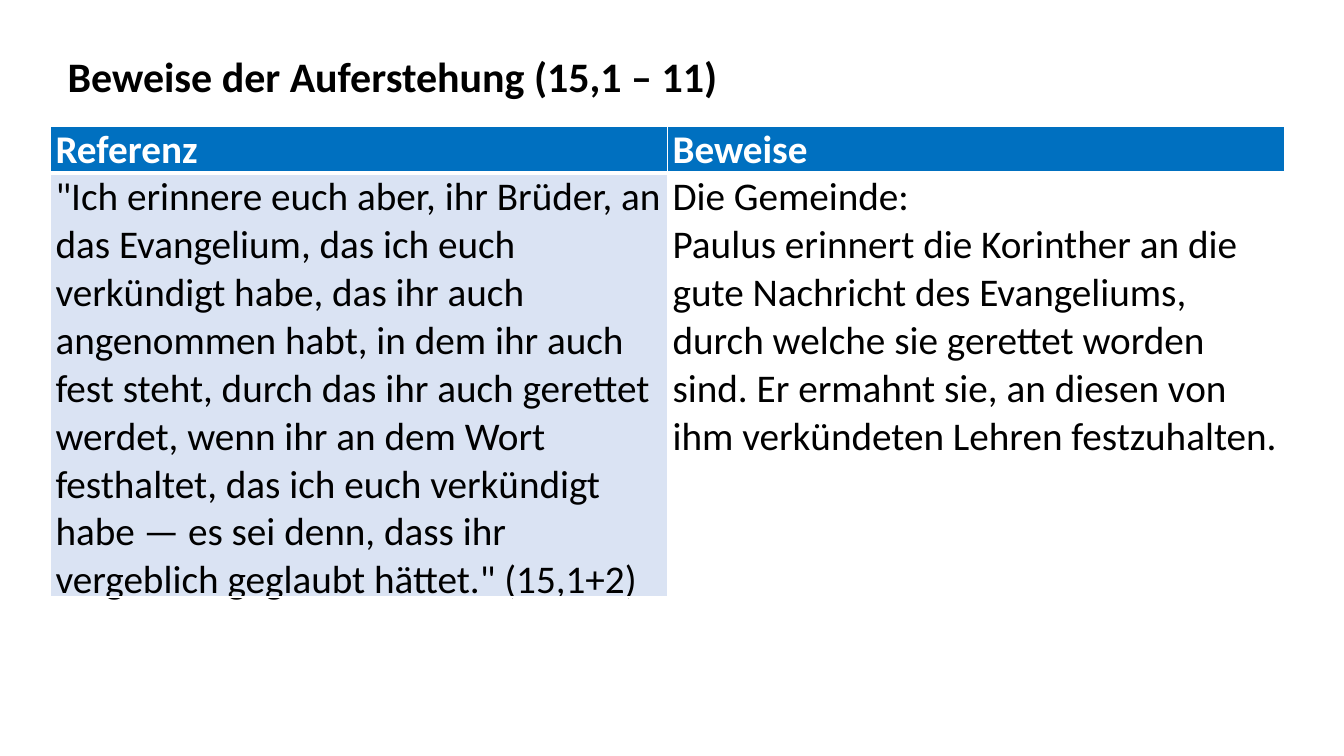
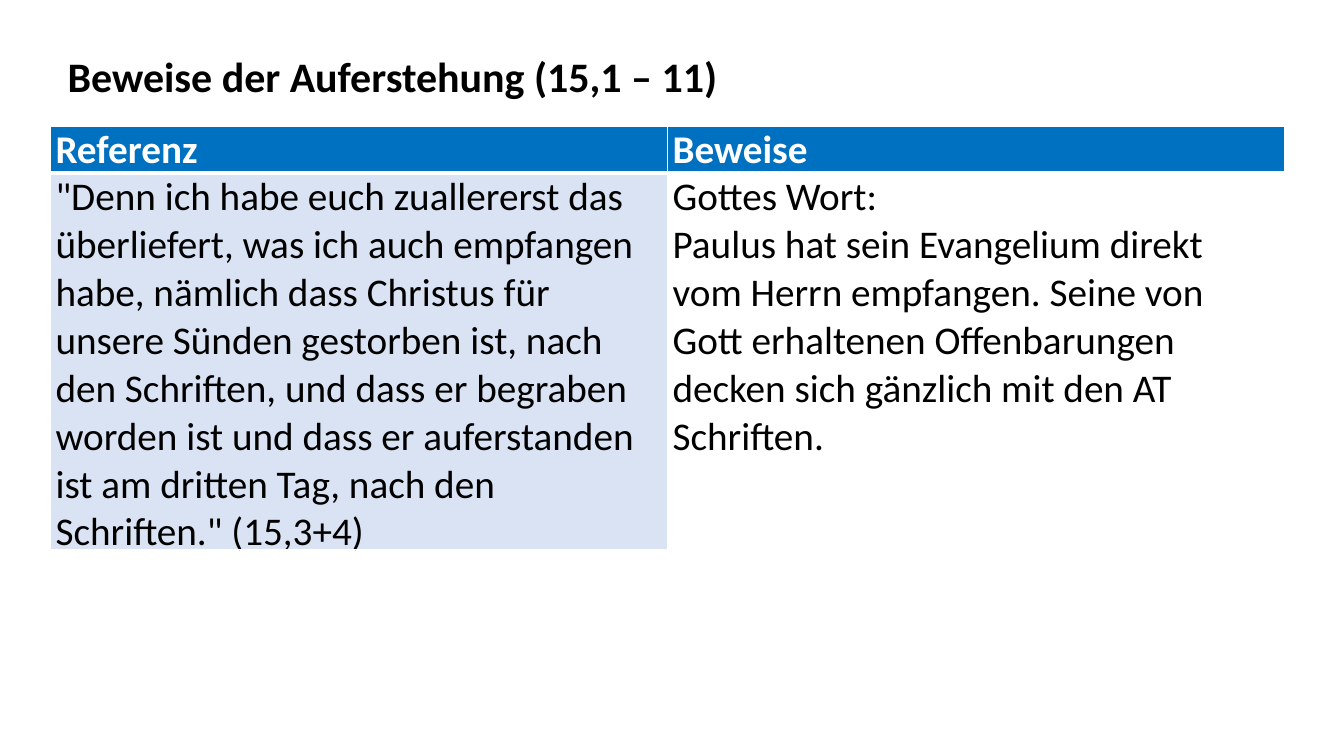
from lxml import etree
from pptx import Presentation
from pptx.dml.color import RGBColor
from pptx.enum import text
from pptx.oxml import ns
from pptx.util import Cm, Pt

BLACK = RGBColor(0, 0, 0)
WHITE = RGBColor(0xFF, 0xFF, 0xFF)
BLUE = RGBColor(0x00, 0x70, 0xC0)
PALE = RGBColor(0xDA, 0xE3, 0xF3)
FONT = "Calibri"
TITLE = "Beweise der Auferstehung (15,1 – 11)"
HEADS = ["Referenz", "Beweise"]

pages = [
    (
        3.1,
        11.86,
        '"Ich erinnere euch aber, ihr Brüder, an das Evangelium, das ich euch '
        "verkündigt habe, das ihr auch angenommen habt, in dem ihr auch fest steht, "
        "durch das ihr auch gerettet werdet, wenn ihr an dem Wort festhaltet, das ich "
        "euch verkündigt habe — es sei denn, dass ihr vergeblich geglaubt "
        'hättet." (15,1+2)',
        "Die Gemeinde:\n"
        "Paulus erinnert die Korinther an die gute Nachricht des Evangeliums, durch "
        "welche sie gerettet worden sind. Er ermahnt sie, an diesen von ihm "
        "verkündeten Lehren festzuhalten.",
    ),
    (
        2.54,
        10.67,
        '"Denn ich habe euch zuallererst das überliefert, was ich auch empfangen '
        "habe, nämlich dass Christus für unsere Sünden gestorben ist, nach den "
        "Schriften, und dass er begraben worden ist und dass er auferstanden ist am "
        'dritten Tag, nach den Schriften." (15,3+4)',
        "Gottes Wort:\n"
        "Paulus hat sein Evangelium direkt vom Herrn empfangen. Seine von Gott "
        "erhaltenen Offenbarungen decken sich gänzlich mit den AT Schriften.",
    ),
]


def style(para, size, color, bold):
    font = para.font
    font.name = FONT
    font.size = Pt(size)
    font.bold = bold
    font.color.rgb = color


def border(cell, widths):
    props = cell._tc.get_or_add_tcPr()
    for spot, (side, width) in enumerate(zip("LRTB", widths)):
        line = etree.Element(ns.qn("a:ln" + side), w=str(Pt(width)))
        fill = etree.SubElement(line, ns.qn("a:solidFill"))
        etree.SubElement(fill, ns.qn("a:srgbClr"), val=str(WHITE))
        props.insert(spot, line)


deck = Presentation()
deck.slide_width = Cm(33.87)
deck.slide_height = Cm(19.05)

for low, tall, quote, proof in pages:
    slide = deck.slides.add_slide(deck.slide_layouts[5])

    title = slide.shapes.title
    title.left, title.top = Cm(1.45), Cm(1.14)
    title.width, title.height = Cm(17.07), Cm(1.55)
    frame = title.text_frame
    frame.text = TITLE
    frame.word_wrap = False
    frame.auto_size = text.MSO_AUTO_SIZE.SHAPE_TO_FIT_TEXT
    frame.vertical_anchor = text.MSO_ANCHOR.TOP
    head = frame.paragraphs[0]
    head.alignment = text.PP_ALIGN.LEFT
    style(head, 30, BLACK, True)

    holder = slide.shapes.add_table(2, 2, Cm(1.27), Cm(3.18), Cm(31.1), Cm(tall))
    table = holder.table
    table.horz_banding = False
    table.rows[0].height = Cm(0.43)
    table.rows[1].height = Cm(low)
    holder.height = Cm(tall)

    rows = [
        (HEADS, [BLUE, BLUE], WHITE, True, (1, 1, 1, 3)),
        ([quote, proof], [PALE, WHITE], BLACK, False, (1, 1, 3, 1)),
    ]
    for row, (words, fills, color, bold, widths) in enumerate(rows):
        for col, (word, fill) in enumerate(zip(words, fills)):
            cell = table.cell(row, col)
            cell.text = word
            cell.margin_left = cell.margin_right = Cm(0.13)
            cell.margin_top = cell.margin_bottom = 0
            cell.fill.solid()
            cell.fill.fore_color.rgb = fill
            border(cell, widths)
            for para in cell.text_frame.paragraphs:
                style(para, 28, color, bold)

deck.save("out.pptx")
